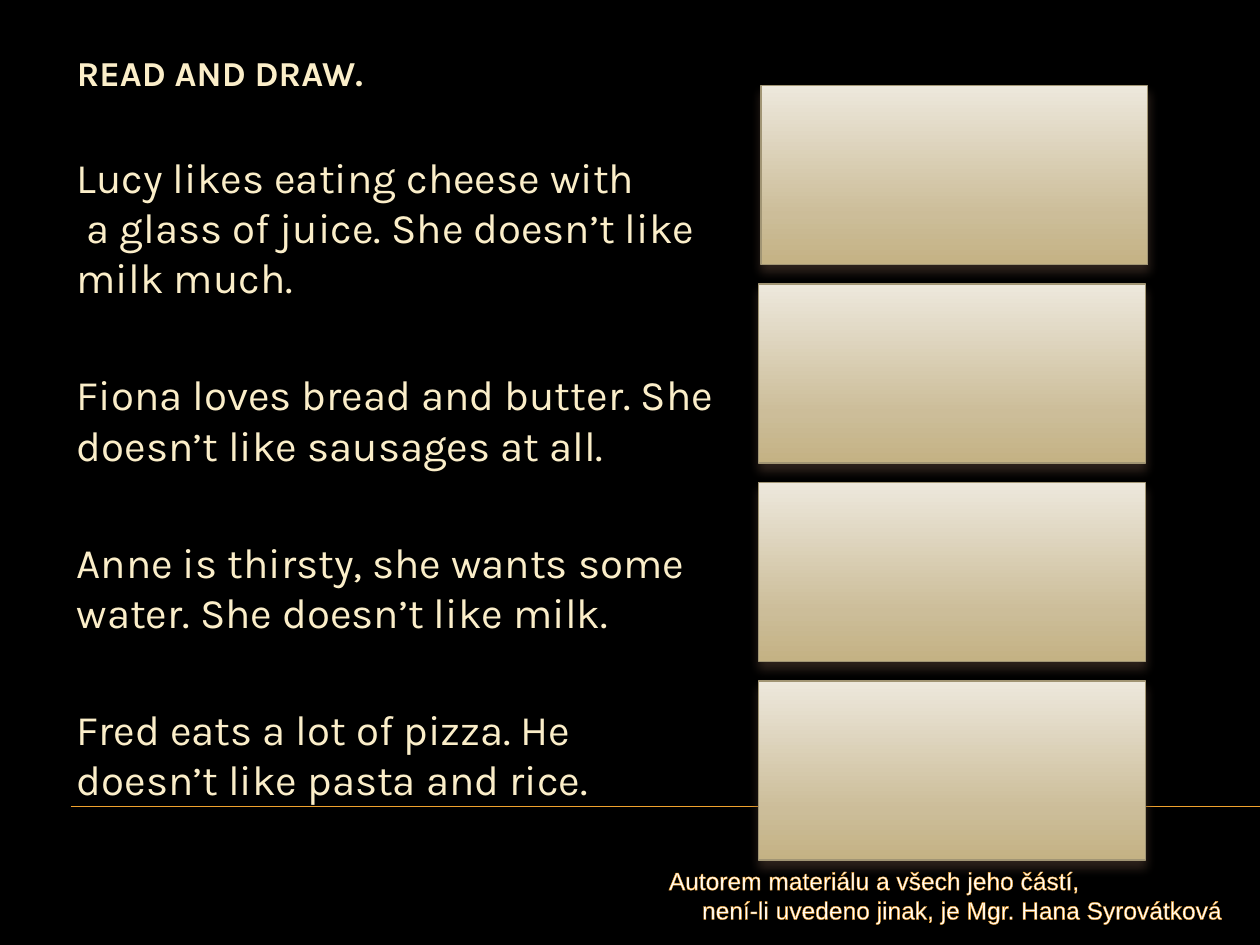
from lxml.etree import SubElement
from pptx import Presentation
from pptx.dml.color import RGBColor
from pptx.enum.shapes import MSO_CONNECTOR as Connector, MSO_SHAPE as Shape
from pptx.enum.text import MSO_ANCHOR as Anchor, PP_ALIGN as Align
from pptx.oxml.ns import qn
from pptx.util import Inches, Pt

TITLE = "READ AND DRAW."
SENTENCES = [
    "Lucy likes eating cheese with\v a glass of juice. She doesn’t like milk much.",
    "Fiona loves bread and butter. She doesn’t like sausages at all.",
    "Anne is thirsty, she wants some water. She doesn’t like milk.",
    "Fred eats a lot of pizza. He doesn’t like pasta and rice.",
]
CREDIT = [  # text, alignment, left indent in inches
    ("Autorem materiálu a všech jeho částí,", Align.LEFT, 0.29),
    ("není-li uvedeno jinak, je Mgr. Hana Syrovátková", Align.RIGHT, 0),
]

THEME = {
    "background": "000000",
    "accent": "F0A22E",
    "frame_line": "A19574",
    "frame_shadow": "4E3B30",
    "frame_fill": [(0, "EDE8DC"), (72, "CCBD99"), (100, "C4B284")],
    "title": {"name": "Karla", "size": Pt(20), "bold": True, "color": "FBEEC9"},
    "sentence": {"name": "Karla", "size": Pt(24), "bold": False, "color": "FBEEC9"},
    "credit": {"name": "Arial", "size": Pt(14), "bold": False, "color": "FFFFFF"},
}

FRAME_LEFTS = [6.04, 6.02, 6.02, 6.02]
FRAME_TOP, FRAME_STEP = 0.68, 1.575
FRAME_SIZE = (3.07, 1.42)


def rgb(color):
    return RGBColor.from_string(color)


def inches(*lengths):
    return [Inches(length) for length in lengths]


def add(parent, tag, **attributes):
    return SubElement(parent, qn(tag), {key: str(value) for key, value in attributes.items()})


def style(font, look):
    for key, value in look.items():
        if key == "color":
            font.color.rgb = rgb(value)
        else:
            setattr(font, key, value)


def add_text_area(slide, *box):
    frame = slide.shapes.add_textbox(*inches(*box)).text_frame
    frame.word_wrap = True
    return frame


def paragraphs(frame, count):
    return [frame.paragraphs[0]] + [frame.add_paragraph() for _ in range(count - 1)]


def add_rule(slide):
    rule = slide.shapes.add_connector(Connector.STRAIGHT, *inches(0.56, 6.4, 10, 6.4))
    rule.line.color.rgb = rgb(THEME["accent"])
    rule.line.width = Pt(0.75)
    add(rule._element.spPr, "a:effectLst")


def add_title(slide):
    title = slide.shapes.title
    title.left, title.top, title.width, title.height = inches(0.51, 0.29, 9.25, 0.57)
    frame = title.text_frame
    frame.text = TITLE
    frame.vertical_anchor = Anchor.MIDDLE
    frame.paragraphs[0].alignment = Align.LEFT
    style(frame.paragraphs[0].runs[0].font, THEME["title"])


def add_sentences(slide):
    frame = add_text_area(slide, 0.51, 1.15, 5.28, 5.67)
    for i, (paragraph, sentence) in enumerate(zip(paragraphs(frame, len(SENTENCES)), SENTENCES)):
        paragraph.text = sentence
        paragraph.space_before = Pt(38 if i else 4.8)
        for run in paragraph.runs:
            style(run.font, THEME["sentence"])


def add_drawing_frame(slide, left, top):
    frame = slide.shapes.add_shape(Shape.RECTANGLE, *inches(left, top, *FRAME_SIZE))
    frame.line.color.rgb = rgb(THEME["frame_line"])
    frame.line.width = Pt(0.79)
    frame.fill.gradient()
    frame.fill.gradient_angle = 270
    properties = frame._element.spPr
    stops = properties.find(".//" + qn("a:gsLst"))
    for stop in list(stops):
        stops.remove(stop)
    for position, color in THEME["frame_fill"]:
        add(add(stops, "a:gs", pos=position * 1000), "a:srgbClr", val=color)
    shadow = add(add(properties, "a:effectLst"), "a:outerShdw", blurRad=Pt(6),
                 dist=Pt(4), dir=90 * 60000, rotWithShape=0)
    add(add(shadow, "a:srgbClr", val=THEME["frame_shadow"]), "a:alpha", val=60000)


def add_credit(slide):
    frame = add_text_area(slide, 4.92, 6.82, 4.88, 0.52)
    for paragraph, (text, alignment, indent) in zip(paragraphs(frame, len(CREDIT)), CREDIT):
        paragraph.text = text
        paragraph.alignment = alignment
        paragraph._p.get_or_add_pPr().set("marL", str(Inches(indent)))
        font = paragraph.runs[0].font
        style(font, THEME["credit"])
        outline = add(font._element, "a:ln", w=Pt(0.8))
        add(add(outline, "a:solidFill"), "a:srgbClr", val=THEME["accent"])
        font._element.insert(0, outline)


def main():
    deck = Presentation()
    deck.slide_width, deck.slide_height = inches(10, 7.5)
    slide = deck.slides.add_slide(deck.slide_layouts[5])
    background = slide.background.fill
    background.solid()
    background.fore_color.rgb = rgb(THEME["background"])
    add_rule(slide)
    add_title(slide)
    add_sentences(slide)
    for i, left in enumerate(FRAME_LEFTS):
        add_drawing_frame(slide, left, FRAME_TOP + i * FRAME_STEP)
    add_credit(slide)
    deck.save("out.pptx")


if __name__ == "__main__":
    main()
